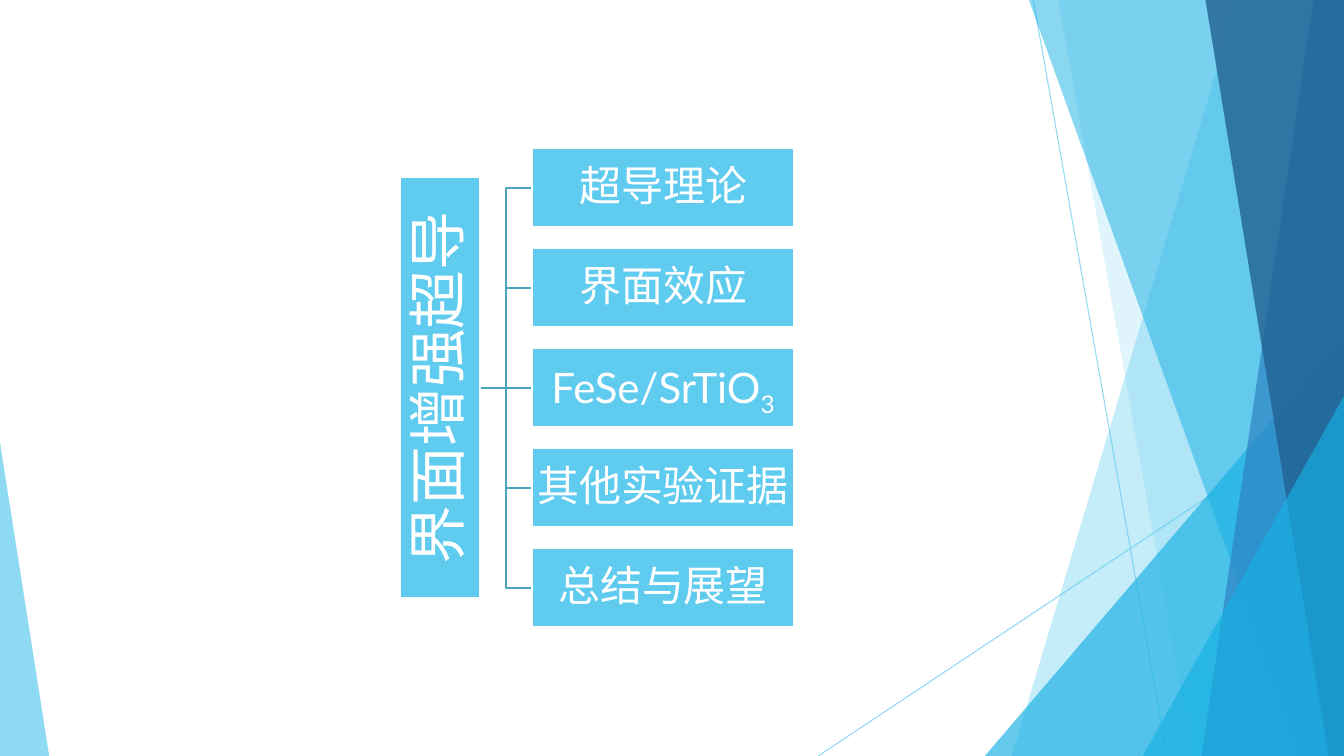
from lxml.etree import SubElement
from pptx import Presentation
from pptx.dml.color import RGBColor
from pptx.enum.shapes import MSO_CONNECTOR as Link, MSO_SHAPE as Preset
from pptx.enum.text import MSO_ANCHOR as Anchor, PP_ALIGN as Align
from pptx.oxml.ns import qn
from pptx.util import Cm, Pt

SKY = RGBColor(0x5F, 0xCB, 0xEF)
CYAN = RGBColor(0x17, 0xB0, 0xE4)
BLUE = RGBColor(0x2E, 0x83, 0xC3)
NAVY = RGBColor(0x22, 0x62, 0x92)
BRANCH = RGBColor(0x4C, 0xA3, 0xBF)
WHITE = RGBColor(0xFF, 0xFF, 0xFF)

WIDTH, HEIGHT = 33.87, 19.05
FONT = "Lato"

ROOT = "界面增强超导"
TOPICS = [
    [("超导理论", False)],
    [("界面效应", False)],
    [("FeSe/SrTiO", False), ("3", True)],
    [("其他实验证据", False)],
    [("总结与展望", False)],
]
MIDDLE = 9.77
PITCH = 2.52
ROOT_CENTRE, ROOT_LENGTH = 11.09, 10.6
BOX_LEFT, BOX_WIDTH, BOX_HEIGHT = 13.41, 6.6, 2.0


def set_opacity(shape, percent):
    for color in shape.element.spPr.iter(qn("a:srgbClr")):
        SubElement(color, qn("a:alpha"), val=str(percent * 1000))


def paint(shape, color, opacity):
    """Fill without outline or shadow."""
    shape.shadow.inherit = False
    shape.fill.solid()
    shape.fill.fore_color.rgb = color
    shape.line.fill.background()
    set_opacity(shape, opacity)


def add_band(page, top_x, bottom_x, color, opacity):
    """Full-height area from a slanted left side to the right page edge."""
    corners = [(WIDTH, 0), (WIDTH, HEIGHT), (bottom_x, HEIGHT)]
    builder = page.shapes.build_freeform(Cm(top_x), 0)
    builder.add_line_segments([(Cm(x), Cm(y)) for x, y in corners])
    paint(builder.convert_to_shape(), color, opacity)


def add_corner(page, left, top, width, apex, color, opacity):
    """Triangle standing on the bottom page edge."""
    shape = page.shapes.add_shape(
        Preset.ISOSCELES_TRIANGLE, Cm(left), Cm(top), Cm(width), Cm(HEIGHT - top))
    shape.adjustments[0] = apex
    paint(shape, color, opacity)


def add_line(page, kind, start, end, color, weight):
    line = page.shapes.add_connector(kind, *map(Cm, start + end))
    line.line.color.rgb = color
    line.line.width = Pt(weight)
    SubElement(line.element.spPr, qn("a:effectLst"))
    return line


def add_box(page, centre, size, spans, points, inset, rotation=0):
    (x, y), (width, height) = centre, size
    box = page.shapes.add_shape(
        Preset.RECTANGLE, Cm(x - width / 2), Cm(y - height / 2), Cm(width), Cm(height))
    box.rotation = rotation
    box.shadow.inherit = False
    box.fill.solid()
    box.fill.fore_color.rgb = SKY
    box.line.color.rgb = WHITE
    box.line.width = Pt(1.5)
    frame = box.text_frame
    frame.word_wrap = True
    frame.vertical_anchor = Anchor.MIDDLE
    for side in ("left", "top", "right", "bottom"):
        setattr(frame, f"margin_{side}", Cm(inset))
    para = frame.paragraphs[0]
    para.alignment = Align.CENTER
    para.line_spacing = 0.9
    for text, lowered in spans:
        span = para.add_run()
        span.text = text
        for name, value in {"name": FONT, "size": Pt(points)}.items():
            setattr(span.font, name, value)
        span.font.color.rgb = WHITE
        if lowered:
            span.font._element.set("baseline", "-25000")


def add_backdrop(page):
    for start, end in [((26.04, 0), (29.41, HEIGHT)), ((WIDTH, 10.24), (20.62, HEIGHT))]:
        set_opacity(add_line(page, Link.STRAIGHT, start, end, SKY, 0.75), 70)
    add_band(page, 31.19, 25.5, SKY, 36)
    add_band(page, 26.67, 30.05, SKY, 20)
    add_corner(page, 24.82, 8.46, 9.05, 1, CYAN, 66)
    add_band(page, 25.93, 32.79, CYAN, 50)
    add_band(page, 33.1, 30.28, BLUE, 70)
    add_band(page, 30.38, 33.48, NAVY, 80)
    add_corner(page, 28.8, 9.98, 5.07, 1, CYAN, 66)
    add_corner(page, 0, 11.15, 1.24, 0, SKY, 70)


def add_outline(page):
    rows = [MIDDLE + (i - (len(TOPICS) - 1) / 2) * PITCH for i in range(len(TOPICS))]
    root_edge = ROOT_CENTRE + BOX_HEIGHT / 2
    for y in rows:
        kind = Link.STRAIGHT if y == MIDDLE else Link.ELBOW
        add_line(page, kind, (root_edge, MIDDLE), (BOX_LEFT, y), BRANCH, 1.5)
    add_box(page, (ROOT_CENTRE, MIDDLE), (ROOT_LENGTH, BOX_HEIGHT),
            [(ROOT, False)], 42, 0.08, rotation=270)
    for y, spans in zip(rows, TOPICS):
        add_box(page, (BOX_LEFT + BOX_WIDTH / 2, y), (BOX_WIDTH, BOX_HEIGHT),
                spans, 30, 0.05)


def main():
    deck = Presentation()
    deck.slide_width, deck.slide_height = Cm(WIDTH), Cm(HEIGHT)
    page = deck.slides.add_slide(deck.slide_layouts.get_by_name("Blank"))
    add_backdrop(page)
    add_outline(page)
    deck.save("out.pptx")


if __name__ == "__main__":
    main()
